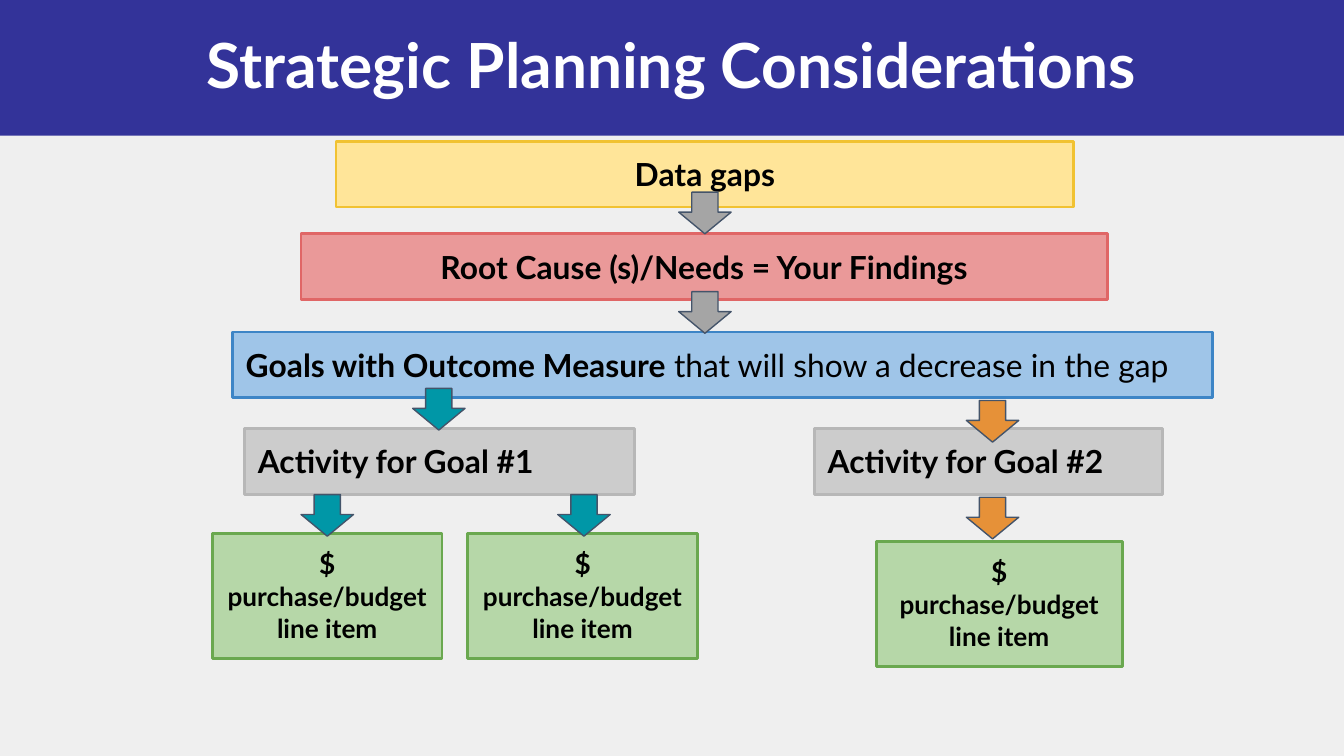
from dataclasses import dataclass

from pptx import Presentation
from pptx.dml.color import RGBColor
from pptx.enum.shapes import MSO_SHAPE
from pptx.enum.text import MSO_ANCHOR, MSO_AUTO_SIZE, PP_ALIGN
from pptx.shapes.autoshape import Shape
from pptx.slide import Slide
from pptx.text.text import TextFrame
from pptx.util import Emu, Pt

RECTANGLE, DOWN_ARROW = MSO_SHAPE.RECTANGLE, MSO_SHAPE.DOWN_ARROW
LEFT, CENTER = PP_ALIGN.LEFT, PP_ALIGN.CENTER
TOP, MIDDLE = MSO_ANCHOR.TOP, MSO_ANCHOR.MIDDLE
GROW = MSO_AUTO_SIZE.SHAPE_TO_FIT_TEXT

EMU_PER_PX = 9144  # 100 px to the inch
SLIDE_W = 1000
FONT = "Lato"
STEP_H, BUDGET_H = 49, 93
ARROW_W, ARROW_H = 39, 31
INSET = 10

COLORS = {
    "page": "EFEFEF", "banner": "333399", "title": "FFFFFF", "text": "000000",
    "gaps": "FFE599", "gaps_line": "F1C232",
    "cause": "EA9999", "cause_line": "E06666",
    "goals": "9FC5E8", "goals_line": "3D85C6",
    "activity": "CCCCCC", "activity_line": "B7B7B7",
    "budget": "B6D7A8", "budget_line": "6AA84F",
    "gray": "A5A5A5", "teal": "0097A7", "orange": "E69138", "arrow_line": "44546A",
}


@dataclass(frozen=True)
class Words:
    text: str
    size: float = 17
    bold: bool = True
    color: str = "text"


@dataclass(frozen=True)
class Step:
    left: int
    top: int
    width: int
    height: int
    color: str
    align: PP_ALIGN
    paragraphs: tuple[tuple[Words, ...], ...]


@dataclass(frozen=True)
class Arrow:
    left: int
    top: int
    color: str


BUDGET_ITEM = Words("purchase/budget line item", 14)
WRAPPED_BUDGET = ((Words("$ ", 15), BUDGET_ITEM),)
SPLIT_BUDGET = ((Words("$", 15),), (BUDGET_ITEM,))

STEPS = (
    Step(250, 105, 549, STEP_H, "gaps", CENTER, ((Words("Data gaps"),),)),
    Step(224, 174, 600, STEP_H, "cause", CENTER,
         ((Words("Root Cause (s)/Needs = Your Findings"),),)),
    Step(173, 247, 729, STEP_H, "goals", LEFT,
         ((Words("Goals with Outcome Measure"),
           Words(" that will show a decrease in the gap", bold=False)),)),
    Step(182, 319, 290, STEP_H, "activity", LEFT, ((Words("Activity for Goal #1"),),)),
    Step(606, 319, 259, STEP_H, "activity", LEFT, ((Words("Activity for Goal #2"),),)),
    Step(158, 397, 171, BUDGET_H, "budget", CENTER, WRAPPED_BUDGET),
    Step(652, 403, 183, BUDGET_H, "budget", CENTER, SPLIT_BUDGET),
    Step(348, 397, 171, BUDGET_H, "budget", CENTER, WRAPPED_BUDGET),
)

ARROWS = (
    Arrow(505, 143, "gray"),
    Arrow(505, 217, "gray"),
    Arrow(307, 289, "teal"),
    Arrow(224, 368, "teal"),
    Arrow(415, 368, "teal"),
    Arrow(719, 370, "orange"),
    Arrow(719, 298, "orange"),
)


def px(length: int) -> Emu:
    return Emu(length * EMU_PER_PX)


def rgb(name: str) -> RGBColor:
    return RGBColor.from_string(COLORS[name])


def set_insets(frame: TextFrame, across: int, down: int) -> None:
    frame.margin_left = frame.margin_right = px(across)
    frame.margin_top = frame.margin_bottom = px(down)


def add_words(frame: TextFrame, paragraphs: tuple[tuple[Words, ...], ...],
              align: PP_ALIGN) -> None:
    for index, line in enumerate(paragraphs):
        paragraph = frame.add_paragraph() if index else frame.paragraphs[0]
        paragraph.alignment = align
        for words in line:
            run = paragraph.add_run()
            run.text = words.text
            run.font.name = FONT
            run.font.size = Pt(words.size)
            run.font.bold = words.bold
            run.font.color.rgb = rgb(words.color)


def add_filled(slide: Slide, preset: MSO_SHAPE, left: int, top: int, width: int,
               height: int, fill: str, line: str = "", line_width: float = 0) -> Shape:
    """Add a shape without shadow; an empty line colour means no outline."""
    shape = slide.shapes.add_shape(preset, px(left), px(top), px(width), px(height))
    shape.shadow.inherit = False
    shape.fill.solid()
    shape.fill.fore_color.rgb = rgb(fill)
    if line:
        shape.line.color.rgb = rgb(line)
        shape.line.width = Pt(line_width)
    else:
        shape.line.fill.background()
    return shape


def add_banner(slide: Slide) -> None:
    add_filled(slide, RECTANGLE, -1, 0, 1001, 101, "banner")
    title = slide.shapes.add_textbox(px(0), px(4), px(SLIDE_W), px(97)).text_frame
    title.word_wrap = True
    title.vertical_anchor = MIDDLE
    set_insets(title, 10, 5)
    add_words(title, ((Words("Strategic Planning Considerations", 33.3, color="title"),),),
              CENTER)
    title.paragraphs[0].line_spacing = 0.8
    title.paragraphs[0].space_after = Pt(30)


def add_step(slide: Slide, step: Step) -> None:
    box = add_filled(slide, RECTANGLE, step.left, step.top, step.width, step.height,
                     step.color, f"{step.color}_line", 1.5)
    frame = box.text_frame
    frame.word_wrap = True
    frame.auto_size = GROW
    frame.vertical_anchor = TOP
    set_insets(frame, INSET, INSET)
    add_words(frame, step.paragraphs, step.align)


def add_arrow(slide: Slide, arrow: Arrow) -> None:
    shape = add_filled(slide, DOWN_ARROW, arrow.left, arrow.top, ARROW_W, ARROW_H,
                       arrow.color, "arrow_line", 0.75)
    shape.adjustments[0] = 0.5
    shape.adjustments[1] = 0.52


def main() -> None:
    deck = Presentation()
    deck.slide_width = px(SLIDE_W)
    deck.slide_height = Emu(deck.slide_width * 9 // 16)
    slide = deck.slides.add_slide(deck.slide_layouts[6])
    slide.background.fill.solid()
    slide.background.fill.fore_color.rgb = rgb("page")
    add_banner(slide)
    for step in STEPS:
        add_step(slide, step)
    for arrow in ARROWS:
        add_arrow(slide, arrow)
    deck.save("out.pptx")


if __name__ == "__main__":
    main()
